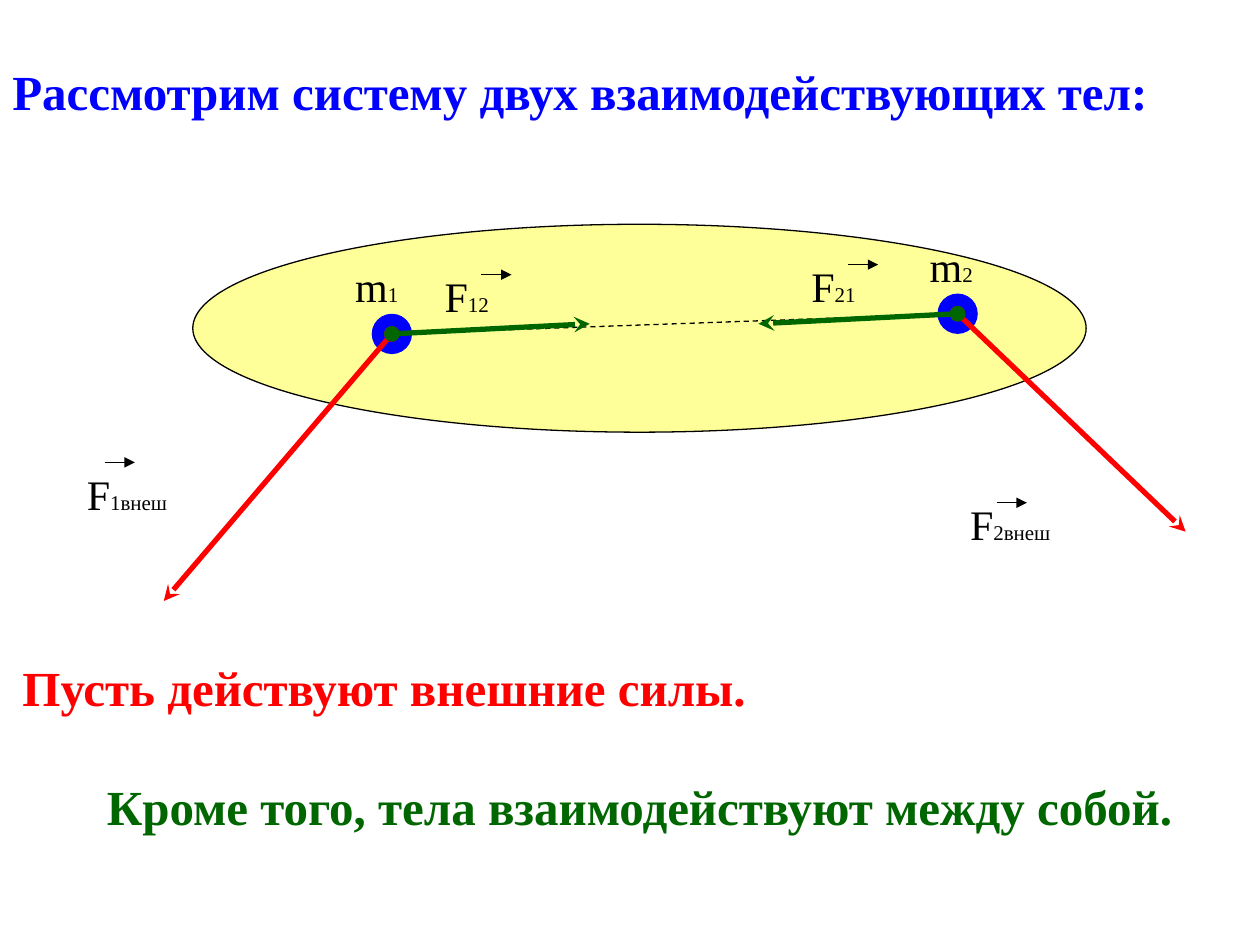
from pptx import Presentation
from pptx.dml.color import RGBColor
from pptx.enum.dml import MSO_LINE
from pptx.enum.shapes import MSO_CONNECTOR, MSO_SHAPE
from pptx.oxml.ns import qn
from pptx.util import Inches, Pt
from lxml.etree import SubElement

COLORS = {
    "black": "000000", "blue": "0000FF", "red": "FF0000",
    "green": "006600", "yellow": "FFFF99",
}
FONT = "Times New Roman"
BALL = 0.32


def color(name):
    return RGBColor.from_string(COLORS[name])


def add_text(s, left, top, width, height, runs):
    """Each run is a text and a dict of font values."""
    tf = s.shapes.add_textbox(*map(Inches, (left, top, width, height))).text_frame
    tf.word_wrap = True
    p = tf.paragraphs[0]
    for text, values in runs:
        r = p.add_run()
        r.text = text
        r.font.color.rgb = color(values.get("color", "black"))
        for key, value in {"name": FONT, "size": Pt(values["size"]),
                           "bold": values.get("bold", False)}.items():
            setattr(r.font, key, value)


def add_statement(s, left, top, width, text, color_name):
    add_text(s, left, top, width, 0.57,
             [(text, {"size": 28, "bold": True, "color": color_name})])


def add_ellipse(s, left, top, width, height, fill, outline=None):
    sp = s.shapes.add_shape(MSO_SHAPE.OVAL, *map(Inches, (left, top, width, height)))
    sp.shadow.inherit = False
    sp.fill.solid()
    sp.fill.fore_color.rgb = color(fill)
    if outline:
        sp.line.color.rgb = color(outline)
        sp.line.width = Pt(0.75)
    else:
        sp.line.fill.background()


def add_line(s, start, end, color_name="black", width=0.75, head=None, tail=None,
             dash=None):
    line = s.shapes.add_connector(MSO_CONNECTOR.STRAIGHT,
                                  *map(Inches, (*start, *end)))
    line.line.color.rgb = color(color_name)
    line.line.width = Pt(width)
    if dash:
        line.line.dash_style = dash
    ln = line.line._get_or_add_ln()
    for tag, kind in (("a:headEnd", head), ("a:tailEnd", tail)):
        if kind:
            SubElement(ln, qn(tag), type=kind)
    SubElement(line._element.spPr, qn("a:effectLst"))


def add_force(s, start, end, color_name):
    add_line(s, start, end, color_name, 3, "oval", "stealth")


def add_label(s, left, top, width, symbol, index, arrow=None):
    """A symbol with a small index; arrow is the offset of its vector sign."""
    add_text(s, left, top, width, 0.5, [(symbol, {"size": 24}), (index, {"size": 12})])
    if arrow:
        x, y = left + arrow[0], top + arrow[1]
        add_line(s, (x, y), (x + 0.24, y), tail="triangle")


def add_system(s, left, top, width, height):
    """Two bodies inside an oval, with inner and outer forces."""
    def at(x, y):
        return left + x, top + y

    body1, body2 = at(1.58, 0.87), at(6.07, 0.71)
    add_ellipse(s, left, top, width, height, "yellow", "black")
    for x, y in (body1, body2):
        add_ellipse(s, x - BALL / 2, y - BALL / 2, BALL, BALL, "blue")

    add_force(s, body1, at(-0.23, 2.99), "red")
    add_force(s, body2, at(7.88, 2.44), "red")
    add_line(s, body1, body2, dash=MSO_LINE.DASH)

    for x, y, label_width, symbol, index, arrow in (
        (1.19, 0.24, 0.63, "m", "1", None),
        (5.75, 0.08, 0.63, "m", "2", None),
        (-0.94, 1.89, 1.18, "F", "1внеш", (0.24, 0)),
        (6.07, 2.13, 1.18, "F", "2внеш", (0.31, 0.08)),
        (1.9, 0.32, 1.18, "F", "12", (0.39, 0.08)),
        (4.81, 0.24, 1.18, "F", "21", (0.39, 0.08)),
    ):
        add_label(s, *at(x, y), label_width, symbol, index, arrow)

    add_force(s, body1, at(3.15, 0.79), "green")
    add_force(s, body2, at(4.49, 0.79), "green")


def main():
    prs = Presentation()
    prs.slide_width, prs.slide_height = Inches(10), Inches(7.5)
    s = prs.slides.add_slide(prs.slide_layouts[6])
    add_statement(s, 0, 0.44, 10, "Рассмотрим систему двух взаимодействующих тел:", "blue")
    add_system(s, 1.53, 1.78, 7.09, 1.65)
    add_statement(s, 0.08, 5.17, 9.92, "Пусть действуют внешние силы.", "red")
    add_statement(s, 0.75, 6.11, 8.74, "Кроме того, тела взаимодействуют между собой.", "green")
    prs.save("out.pptx")


if __name__ == "__main__":
    main()
